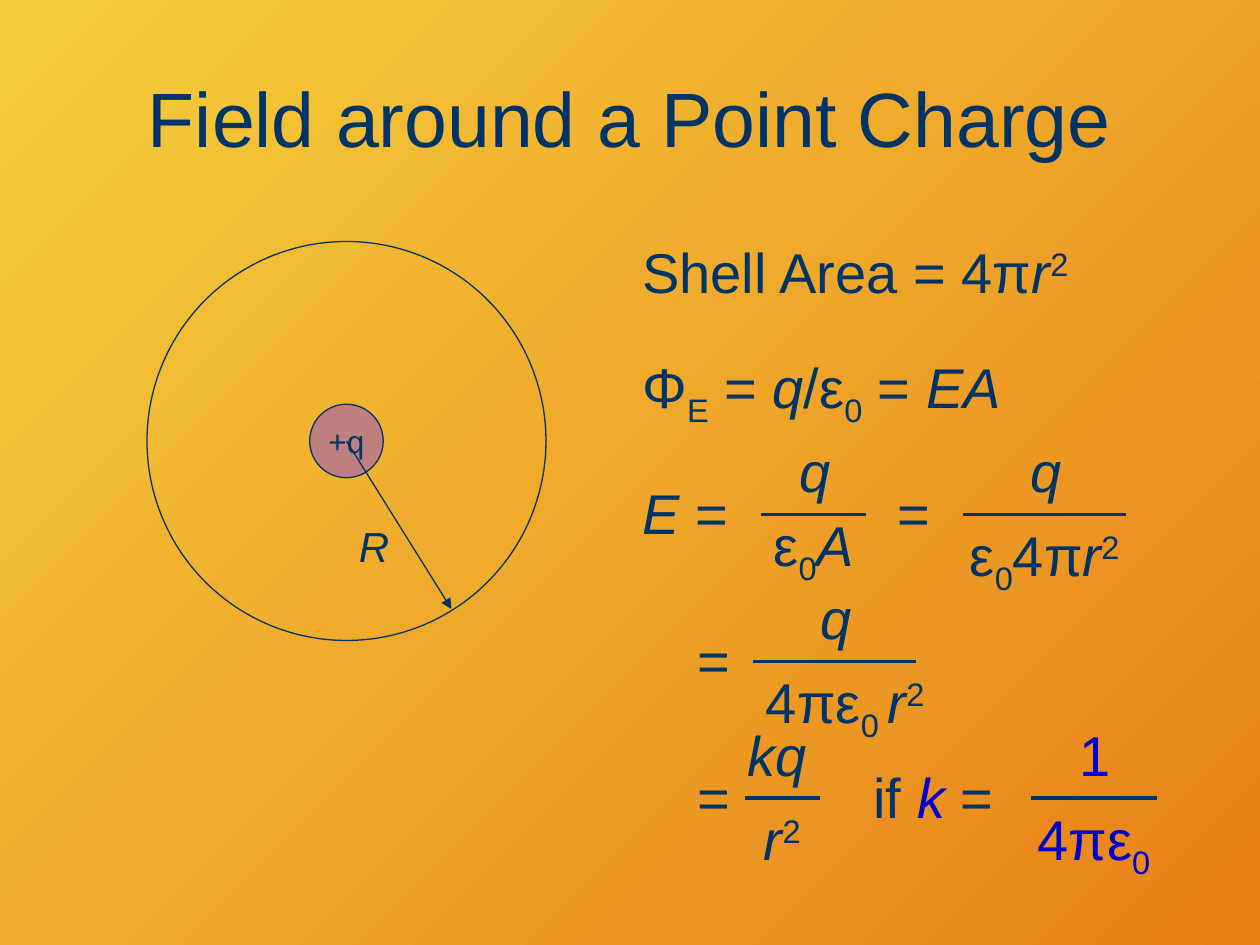
import pptx
import pptx.util
import pptx.dml.color
import pptx.enum.shapes
import pptx.enum.text
import pptx.oxml.ns
import lxml.etree

Pt = pptx.util.Pt
RGB = pptx.dml.color.RGBColor.from_string
ALIGN = pptx.enum.text.PP_ALIGN
ANCHOR = pptx.enum.text.MSO_ANCHOR
OVAL = pptx.enum.shapes.MSO_SHAPE.OVAL
STRAIGHT = pptx.enum.shapes.MSO_CONNECTOR.STRAIGHT

THEME = {
    "font": "Arial", "ink": "003366", "accent": "0000CC", "charge": "C07F7F",
    "background": ("F5CE3D", "E88018"),
    "title": 44, "equation": 32, "radius": 24, "charge_label": 18,
    "thin": 0.75, "bar": 2.25,
}
BASELINE = {"sub": "-25000", "sup": "30000"}

# Runs are (text, styles); styles: i = italic, sub, sup, accent
TITLE = [("Field around a Point Charge", "")]
Q = [("q", "i")]
R_SQUARED = [("r", "i"), ("2", "sup")]
EQUALS = [("=", "")]

# Free-standing equations: left, top, width, centred, runs
EQUATIONS = [
    (360, 132, 306, False, [("Shell Area = 4π", "")] + R_SQUARED),
    (360, 198, 294, False, [("Φ", ""), ("E", "sub"), (" = ", ""), ("q", "i"), ("/ε", ""),
                            ("0", "sub"), (" = ", ""), ("EA", "i")]),
    (360, 270, 72, False, [("E", "i"), (" =", "")]),
    (504, 270, 36, True, EQUALS),
]
# Each fraction is centred on cx; its label is (left, width, centred, runs)
FRACTIONS = [
    dict(cx=465, bar_y=294, bar=60, top=(30, Q), shift=(0, -6),
         bottom=(66, [("ε", ""), ("0", "sub"), ("A", "i")])),
    dict(cx=597, bar_y=294, bar=93, top=(30, Q),
         bottom=(102, [("ε", ""), ("0", "sub"), ("4π", "")] + R_SQUARED)),
    dict(cx=477, bar_y=378, bar=93, top=(30, Q), shift=(6, 0),
         bottom=(114, [("4πε", ""), ("0 ", "sub")] + R_SQUARED),
         label=(390, 36, True, EQUALS)),
    dict(cx=447, bar_y=456, bar=43, top=(54, [("kq", "i")]), bottom=(42, R_SQUARED),
         label=(390, 36, True, EQUALS)),
    dict(cx=625, bar_y=456, bar=72, top=(30, [("1", "accent")]),
         bottom=(83, [("4πε", "accent"), ("0", "sub accent")]),
         label=(492, 90, False, [("if ", ""), ("k", "i accent"), (" =", "")])),
]
BOX_HEIGHT = 48
CENTER = (198, 252)
SHELL, CHARGE = 228, 42
ARROW_TIP = (258, 348)


def write(tf, runs, size, centred=False):
    p = tf.paragraphs[0]
    p.alignment = ALIGN.CENTER if centred else ALIGN.LEFT
    for text, styles in runs:
        styles = styles.split()
        r = p.add_run()
        r.text = text
        r.font.name = THEME["font"]
        r.font.size = Pt(size)
        r.font.italic = "i" in styles
        r.font.color.rgb = RGB(THEME["accent" if "accent" in styles else "ink"])
        for style in BASELINE.keys() & set(styles):
            r.font._element.set("baseline", BASELINE[style])
    return p


def add_text(shapes, left, top, width, height, runs, size, centred=False, wrap=True):
    tf = shapes.add_textbox(Pt(left), Pt(top), Pt(width), Pt(height)).text_frame
    tf.word_wrap = wrap
    write(tf, runs, size, centred)
    return tf


def add_equation(shapes, left, top, width, centred, runs):
    """Add a text box with a hanging indent and 20% space before."""
    tf = add_text(shapes, left, top, width, BOX_HEIGHT, runs, THEME["equation"], centred)
    pPr = tf.paragraphs[0]._p.get_or_add_pPr()
    pPr.set("marL", str(Pt(27)))
    pPr.set("indent", str(-Pt(27)))
    before = lxml.etree.SubElement(pPr, pptx.oxml.ns.qn("a:spcBef"))
    lxml.etree.SubElement(before, pptx.oxml.ns.qn("a:spcPct")).set("val", "20000")


def add_line(shapes, start, end, weight):
    line = shapes.add_connector(STRAIGHT, *(Pt(v) for v in start + end))
    line.line.color.rgb = RGB(THEME["ink"])
    line.line.width = Pt(weight)
    lxml.etree.SubElement(line._element.spPr, pptx.oxml.ns.qn("a:effectLst"))
    return line


def add_circle(shapes, diameter, fill=None):
    left, top = (c - diameter / 2 for c in CENTER)
    sp = shapes.add_shape(OVAL, Pt(left), Pt(top), Pt(diameter), Pt(diameter))
    sp.shadow.inherit = False
    sp.line.color.rgb = RGB(THEME["ink"])
    sp.line.width = Pt(THEME["thin"])
    if fill:
        sp.fill.solid()
        sp.fill.fore_color.rgb = RGB(fill)
    else:
        sp.fill.background()
    return sp


def add_fraction(shapes, cx, bar_y, bar, top, bottom, shift=(0, 0), label=None):
    """Group numerator, denominator and bar; shift offsets the denominator."""
    group = shapes.add_group_shape().shapes
    width, runs = top
    add_equation(group, cx - width / 2, bar_y - BOX_HEIGHT, width, False, runs)
    width, runs = bottom
    add_equation(group, cx - width / 2 + shift[0], bar_y + shift[1], width, True, runs)
    add_line(group, (cx - bar / 2, bar_y), (cx + bar / 2, bar_y), THEME["bar"])
    if label:
        left, width, centred, runs = label
        add_equation(group, left, bar_y - BOX_HEIGHT / 2, width, centred, runs)


def add_diagram(shapes):
    charge = add_circle(shapes, CHARGE, THEME["charge"])
    tf = charge.text_frame
    tf.word_wrap = False
    tf.vertical_anchor = ANCHOR.MIDDLE
    write(tf, [("+q", "")], THEME["charge_label"], centred=True)
    add_circle(shapes, SHELL)
    group = shapes.add_group_shape().shapes
    arrow = add_line(group, CENTER, ARROW_TIP, THEME["thin"])
    ln = arrow.line._get_or_add_ln()
    lxml.etree.SubElement(ln, pptx.oxml.ns.qn("a:tailEnd")).set("type", "triangle")
    add_text(group, 198, 294, 32, 36, [("R", "i")], THEME["radius"], wrap=False)


def main():
    prs = pptx.Presentation()
    prs.slide_width, prs.slide_height = Pt(720), Pt(540)
    s = prs.slides.add_slide(prs.slide_layouts[6])

    fill = s.background.fill
    fill.gradient()
    fill.gradient_angle = 315
    for stop, color in zip(fill.gradient_stops, THEME["background"]):
        stop.color.rgb = RGB(color)

    title = add_text(s.shapes, 36, 21.6, 648, 90, TITLE, THEME["title"], centred=True)
    title.vertical_anchor = ANCHOR.MIDDLE
    add_diagram(s.shapes)
    for equation in EQUATIONS:
        add_equation(s.shapes, *equation)
    for fraction in FRACTIONS:
        add_fraction(s.shapes, **fraction)
    prs.save("out.pptx")


if __name__ == "__main__":
    main()
